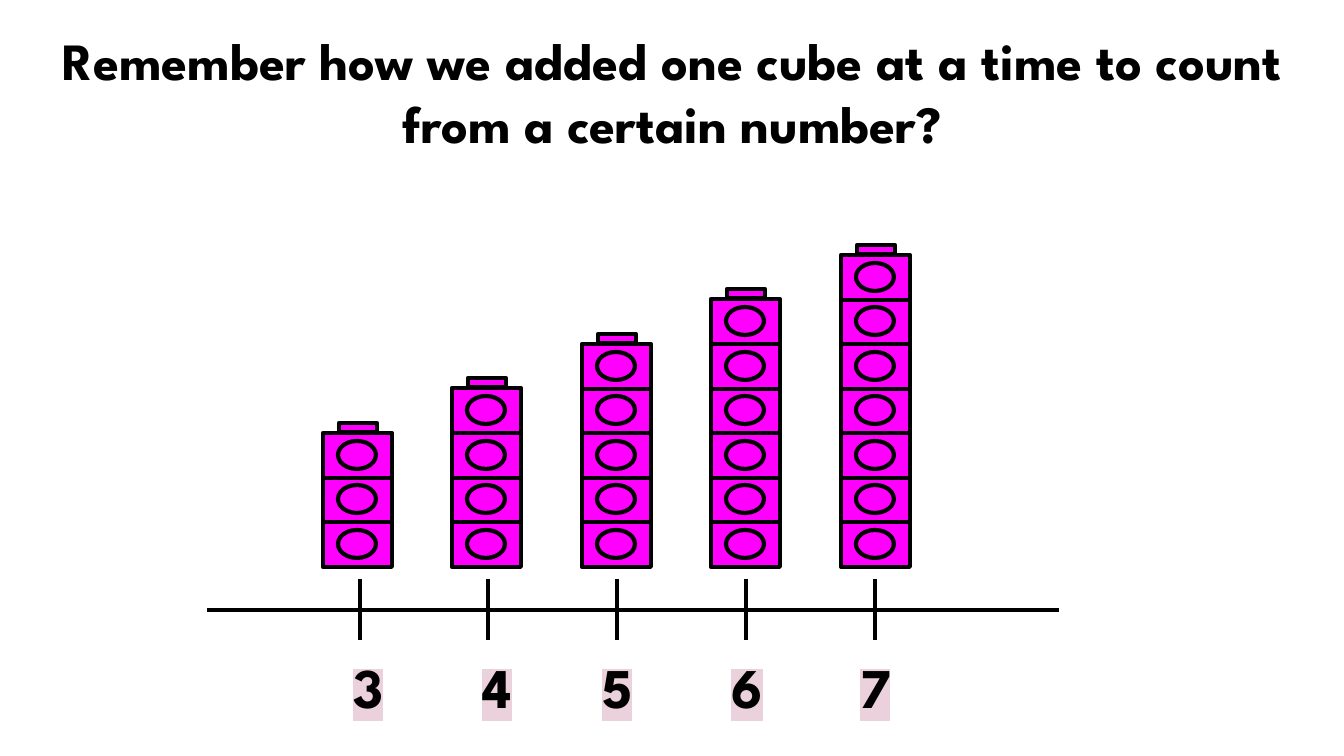
from lxml import etree
from pptx import Presentation, util as u
from pptx.dml.color import RGBColor
from pptx.enum import shapes, text
from pptx.oxml.ns import qn

PX = 914400 / 134.4
INK, CUBE, HIGHLIGHT = "000000", "FF00FF", "EAD1DC"


def px(*lengths):
    return [u.Emu(round(n * PX)) for n in lengths]


def color(hex_code):
    return RGBColor.from_string(hex_code)


deck = Presentation()
deck.slide_width, deck.slide_height = px(1344, 756)
slide = deck.slides.add_slide(deck.slide_layouts[6])

# Number line: axis, then one tick per tower
ticks = [360 + 515 * i // 4 for i in range(5)]
lines = [(207, 610, 1059, 610)] + [(x, 579, x, 640) for x in ticks]
for ends in lines:
    line = slide.shapes.add_connector(shapes.MSO_CONNECTOR.STRAIGHT, *px(*ends))
    line.line.color.rgb = color(INK)
    line.line.width = u.Pt(2.25)
    etree.SubElement(line._element.spPr, qn("a:effectLst"))

# Cube towers, stacked upwards from the base, each topped by a stud
RECT, OVAL = shapes.MSO_SHAPE.RECTANGLE, shapes.MSO_SHAPE.OVAL
base = 566
for i, count in enumerate(range(3, 8)):
    left = 323 + 259 * i // 2
    parts = []
    for level in range(1, count + 1):
        top = base - 89 * level // 2
        parts += [(RECT, left, top, 69, 45), (OVAL, left + 15, top + 8, 38, 28)]
    parts.append((RECT, left + 16, top - 10, 38, 9))
    for kind, *box in parts:
        part = slide.shapes.add_shape(kind, *px(*box))
        part.shadow.inherit = False
        part.fill.solid()
        part.fill.fore_color.rgb = color(CUBE)
        part.line.color.rgb = color(INK)
        part.line.width = u.Pt(2.25)

# Heading and number labels: wording, box, size, alignment, highlight
heading = "Remember how we added one cube at a time to count from a certain number?"
texts = [(heading, (46, 15, 1252, 84), 28, text.PP_ALIGN.CENTER, None)]
for number, left in zip("34567", (340, 469, 589, 718, 847)):
    texts.append((number, (left, 640, 56, 26), 30, text.PP_ALIGN.LEFT, HIGHLIGHT))

inset = u.Inches(0.1)
frame_format = {"word_wrap": True, "vertical_anchor": text.MSO_ANCHOR.TOP,
                "margin_left": inset, "margin_right": inset,
                "margin_top": inset, "margin_bottom": inset}
for wording, box, size, align, highlight in texts:
    frame = slide.shapes.add_textbox(*px(*box)).text_frame
    for key, value in frame_format.items():
        setattr(frame, key, value)
    paragraph = frame.paragraphs[0]
    paragraph.alignment = align
    run = paragraph.add_run()
    run.text = wording
    for key, value in {"name": "League Spartan", "size": u.Pt(size), "bold": True}.items():
        setattr(run.font, key, value)
    run.font.color.rgb = color(INK)
    if highlight:
        mark = etree.Element(qn("a:highlight"))
        etree.SubElement(mark, qn("a:srgbClr"), val=highlight)
        run.font._element.find(qn("a:solidFill")).addnext(mark)

deck.save("out.pptx")
